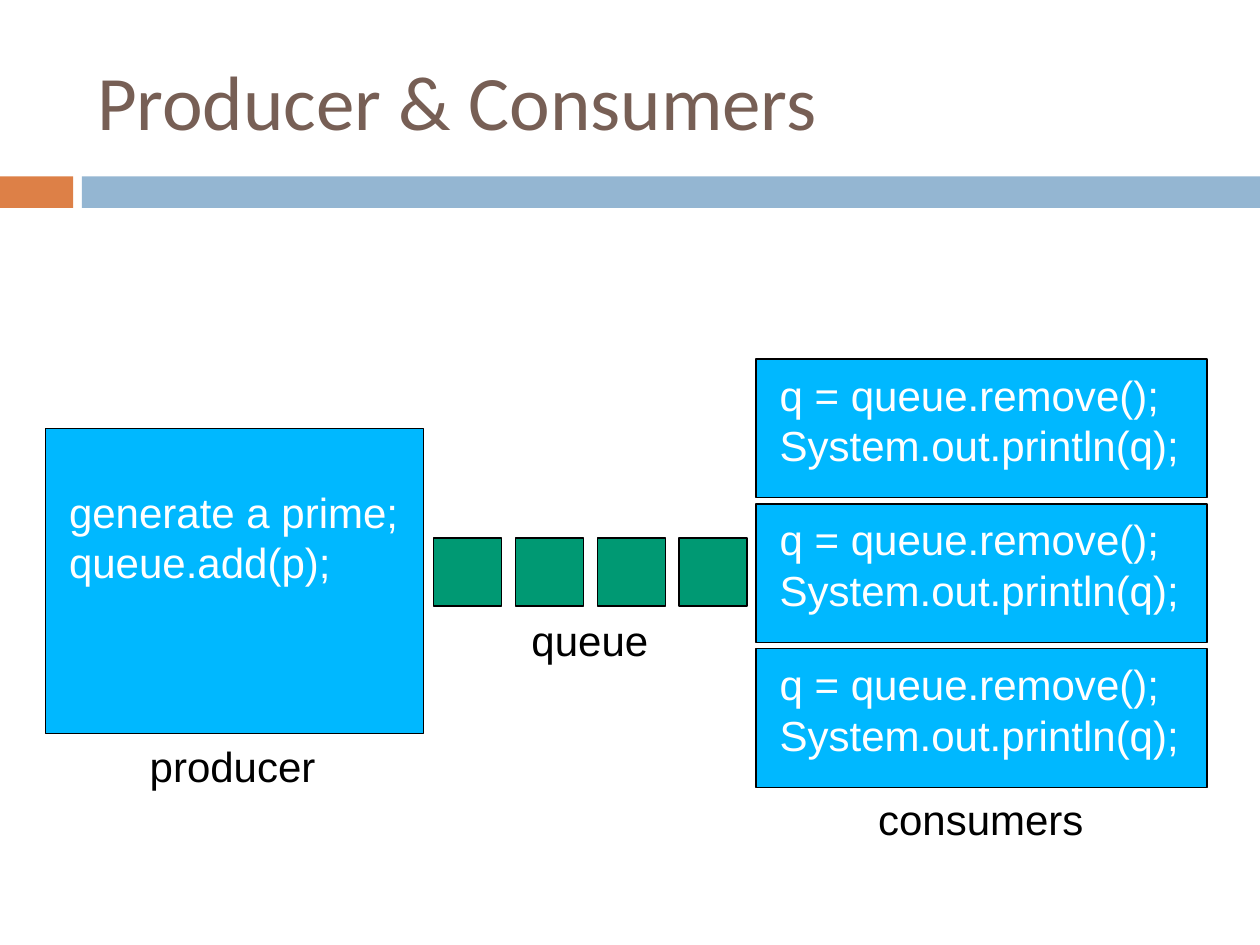
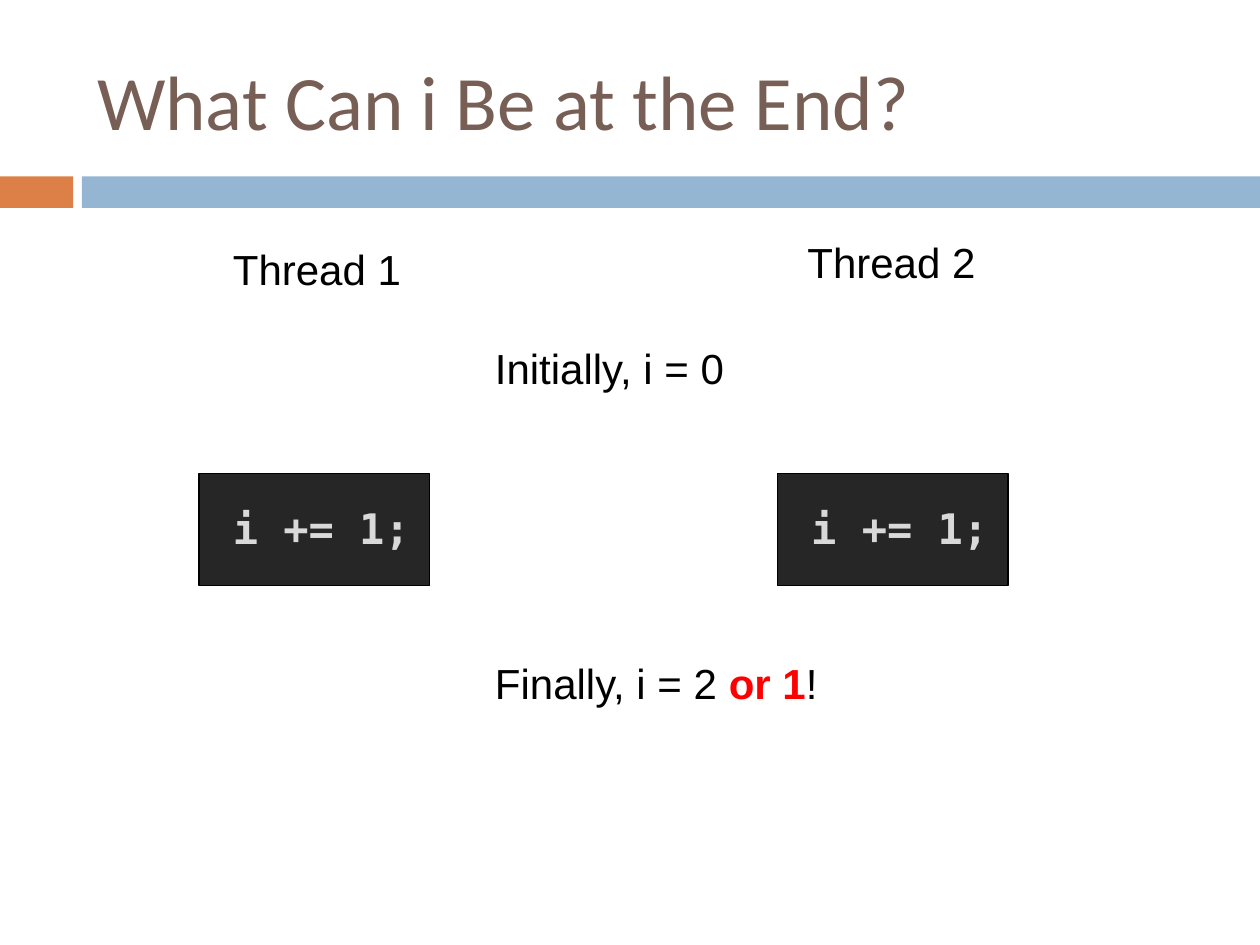
"""Build two slides on threads that share a queue and a counter."""
from pptx import Presentation, util as u
from pptx.dml.color import RGBColor
from pptx.enum import shapes as kinds, text as txt

INK = {
    "title": "775F55", "accent": "DD8047", "band": "94B6D2",
    "box": "00B8FF", "item": "009973", "code": "262626",
    "pale": "D9D9D9", "white": "FFFFFF", "black": "000000", "red": "FF0000",
}


def tint(name):
    """Return the named colour."""
    return RGBColor.from_string(INK[name])


def style(run, size=24, font="Arial", color="black", bold=False):
    """Format one run."""
    run.font.size = u.Pt(size)
    run.font.name = font
    run.font.bold = bold
    run.font.color.rgb = tint(color)


def write(frame, lines, **fmt):
    """Fill a frame with lines, each a string or a list of (text, format) runs."""
    for num, line in enumerate(lines):
        para = frame.paragraphs[0] if num == 0 else frame.add_paragraph()
        para.alignment = txt.PP_ALIGN.LEFT
        runs = [(line, {})] if isinstance(line, str) else line
        for words, extra in runs:
            run = para.add_run()
            run.text = words
            style(run, **{**fmt, **extra})


def label(pane, area, *lines, **fmt):
    """Add a text box at area, with one paragraph a line."""
    frame = pane.add_textbox(*map(u.Inches, area)).text_frame
    frame.word_wrap = False
    frame.auto_size = txt.MSO_AUTO_SIZE.SHAPE_TO_FIT_TEXT
    write(frame, lines, **fmt)


def block(pane, area, fill, edge=True):
    """Add a filled rectangle, with a thin black edge if wanted."""
    rect = pane.add_shape(kinds.MSO_SHAPE.RECTANGLE, *map(u.Inches, area))
    rect.shadow.inherit = False
    rect.fill.solid()
    rect.fill.fore_color.rgb = tint(fill)
    if edge:
        rect.line.color.rgb = tint("black")
        rect.line.width = u.Pt(0.75)
    else:
        rect.line.fill.background()


def start(deck, title):
    """Add a slide with the bands and title, and return its shapes."""
    pane = deck.slides.add_slide(deck.slide_layouts[5]).shapes
    block(pane, (0, 1.4, 0.58, 0.25), "accent", edge=False)
    block(pane, (0.65, 1.4, 9.35, 0.25), "band", edge=False)
    head = pane.title
    head.left, head.top = u.Inches(0.67), u.Inches(0.25)
    head.width, head.height = u.Inches(8.91), u.Inches(1.08)
    frame = head.text_frame
    frame.auto_size = txt.MSO_AUTO_SIZE.NONE
    frame.word_wrap = True
    frame.vertical_anchor = txt.MSO_ANCHOR.MIDDLE
    write(frame, [title], size=44, font="Calibri", color="title")
    return pane


def reader(pane, top):
    """Add one consumer box with its code."""
    group = pane.add_group_shape().shapes
    block(group, (6, top, 3.58, 1.1), "box")
    label(group, (6.09, top + 0.03, 3.4, 0.91),
          "q = queue.remove();", "System.out.println(q);", color="white")


def thread(pane, left):
    """Add one thread's code box."""
    group = pane.add_group_shape().shapes
    block(group, (left, 3.76, 1.83, 0.89), "code")
    label(group, (left + 0.17, 3.94, 1.67, 0.5), "i += 1;",
          font="DejaVu Sans Mono", color="pale", bold=True)


def queue(deck):
    """Build the producer and consumers slide."""
    pane = start(deck, "Producer & Consumers")
    block(pane, (0.36, 3.4, 3, 2.42), "box")
    label(pane, (0.45, 3.81, 2.84, 0.91),
          "generate a prime;", "queue.add(p);", color="white")
    for num in range(4):
        block(pane, (3.44 + 0.65 * num, 4.27, 0.54, 0.54), "item")
    for num in range(3):
        reader(pane, 2.85 + 1.15 * num)
    label(pane, (1.09, 5.83, 1.53, 0.5), "producer")
    label(pane, (4.12, 4.83, 1.14, 0.5), "queue")
    label(pane, (6.87, 6.25, 1.85, 0.5), "consumers")


def race(deck):
    """Build the slide on two threads that change i."""
    pane = start(deck, "What Can i Be at the End?")
    for left in (1.58, 6.17):
        thread(pane, left)
    label(pane, (1.75, 1.88, 1.55, 0.5), "Thread 1")
    label(pane, (6.31, 1.83, 1.55, 0.5), "Thread 2")
    label(pane, (3.83, 2.67, 2.04, 0.5), "Initially, i = 0")
    label(pane, (3.83, 5.17, 2.79, 0.5),
          [("Finally, i = 2 ", {}), ("or 1", {"color": "red", "bold": True}), ("!", {})])


def main():
    """Build and save the deck."""
    deck = Presentation()
    deck.slide_width, deck.slide_height = u.Inches(10), u.Inches(7.5)
    queue(deck)
    race(deck)
    deck.save("out.pptx")


if __name__ == "__main__":
    main()
